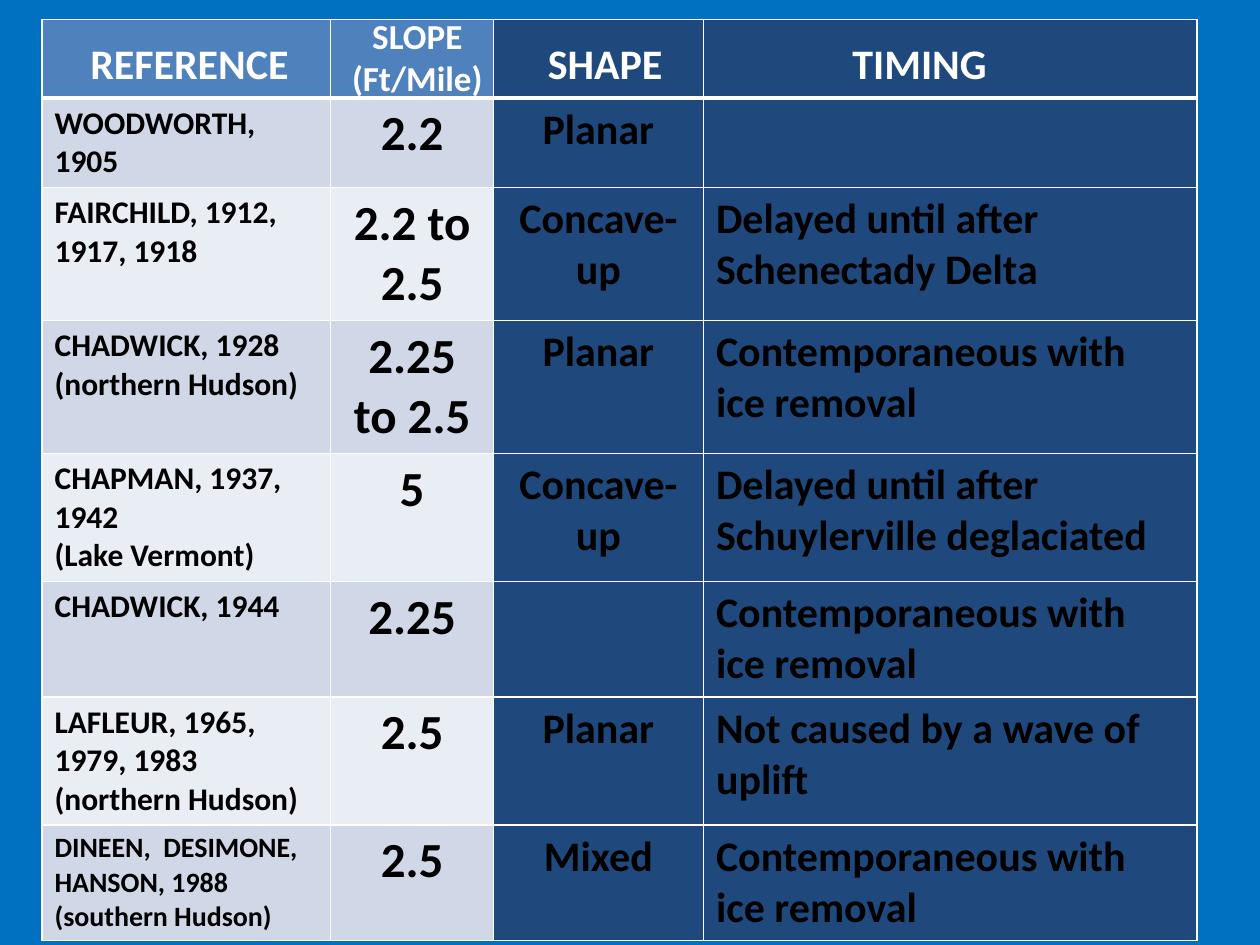
import pptx
import pptx.util
import pptx.dml.color
import pptx.enum.text
import pptx.oxml
import pptx.oxml.ns

Pt = pptx.util.Pt
RGBColor = pptx.dml.color.RGBColor
Align = pptx.enum.text.PP_ALIGN

BACKGROUND = RGBColor(0x00, 0x70, 0xC0)
HEADER_BLUE = RGBColor(0x4F, 0x81, 0xBD)
NAVY = RGBColor(0x1F, 0x49, 0x7D)
BANDS = [RGBColor(0xD0, 0xD8, 0xE8), RGBColor(0xE9, 0xED, 0xF4)]
BLACK = RGBColor(0x00, 0x00, 0x00)
WHITE = RGBColor(0xFF, 0xFF, 0xFF)


def write(frame, text, size, color=BLACK, align=Align.LEFT):
    for number, line in enumerate(text.split("\n")):
        paragraph = frame.paragraphs[0] if number == 0 else frame.add_paragraph()
        paragraph.alignment = align
        run = paragraph.add_run()
        run.text = line
        run.font.name = "Calibri"
        run.font.size = Pt(size)
        run.font.bold = True
        run.font.color.rgb = color


def style_cell(cell, fill, bottom, top):
    properties = cell._tc.get_or_add_tcPr()
    for side, width in (("L", 1), ("R", 1), ("T", top), ("B", bottom)):
        properties.append(pptx.oxml.parse_xml(
            f'<a:ln{side} {pptx.oxml.ns.nsdecls("a")} w="{Pt(width)}">'
            f'<a:solidFill><a:srgbClr val="{WHITE}"/></a:solidFill></a:ln{side}>'))
    cell.fill.solid()
    cell.fill.fore_color.rgb = fill


studies = [
    ("WOODWORTH, 1905", "2.2", "Planar", ""),
    ("FAIRCHILD, 1912, 1917, 1918", "2.2 to 2.5", "Concave-up",
     "Delayed until after Schenectady Delta"),
    ("CHADWICK, 1928\n(northern Hudson)", "2.25 to 2.5", "Planar",
     "Contemporaneous with ice removal"),
    ("CHAPMAN, 1937, 1942\n(Lake Vermont)", "5", "Concave-up",
     "Delayed until after Schuylerville deglaciated"),
    ("CHADWICK, 1944", "2.25", "", "Contemporaneous with ice removal"),
    ("LAFLEUR, 1965, 1979, 1983\n(northern Hudson)", "2.5", "Planar",
     "Not caused by a wave of uplift"),
    ("DINEEN,  DESIMONE, HANSON, 1988\n(southern Hudson)", "2.5", "Mixed",
     "Contemporaneous with ice removal"),
]
column_widths = [165, 93, 120, 282]
row_heights = [45, 51, 76, 76, 73, 66, 73, 66]
column_sizes = [18, 28, 24, 24]
column_aligns = [Align.LEFT, Align.CENTER, Align.CENTER, Align.LEFT]

presentation = pptx.Presentation()
presentation.slide_width = Pt(720)
presentation.slide_height = Pt(540)
slide = presentation.slides.add_slide(presentation.slide_layouts[6])
slide.background.fill.solid()
slide.background.fill.fore_color.rgb = BACKGROUND

comparison = slide.shapes.add_table(
    len(row_heights), len(column_widths), Pt(24), Pt(11),
    Pt(sum(column_widths)), Pt(sum(row_heights))).table
for column, width in zip(comparison.columns, column_widths):
    column.width = Pt(width)
for row, height in zip(comparison.rows, row_heights):
    row.height = Pt(height)

for column in range(len(column_widths)):
    header_fill = HEADER_BLUE if column < 2 else NAVY
    style_cell(comparison.cell(0, column), header_fill, bottom=3, top=1)

for row, study in enumerate(studies, start=1):
    for column, text in enumerate(study):
        cell = comparison.cell(row, column)
        fill = BANDS[(row - 1) % 2] if column < 2 else NAVY
        style_cell(cell, fill, bottom=1, top=3 if row == 1 else 1)
        if text:
            size = 16 if text.startswith("DINEEN") else column_sizes[column]
            write(cell.text_frame, text, size, align=column_aligns[column])

headings = [
    ("REFERENCE", 44.5, 18, 129, 36, 24, False, Align.LEFT),
    ("SLOPE (Ft/Mile)", 168, 4.5, 141, 55.5, 20, True, Align.CENTER),
    ("SHAPE", 306, 18, 80.5, 36, 24, False, Align.LEFT),
    ("TIMING", 480, 18, 92, 36, 24, False, Align.LEFT),
]
for text, left, top, width, height, size, wrap, align in headings:
    heading = slide.shapes.add_textbox(Pt(left), Pt(top), Pt(width), Pt(height))
    heading.text_frame.word_wrap = wrap
    heading.text_frame.auto_size = pptx.enum.text.MSO_AUTO_SIZE.SHAPE_TO_FIT_TEXT
    write(heading.text_frame, text, size, color=WHITE, align=align)

presentation.save("out.pptx")
